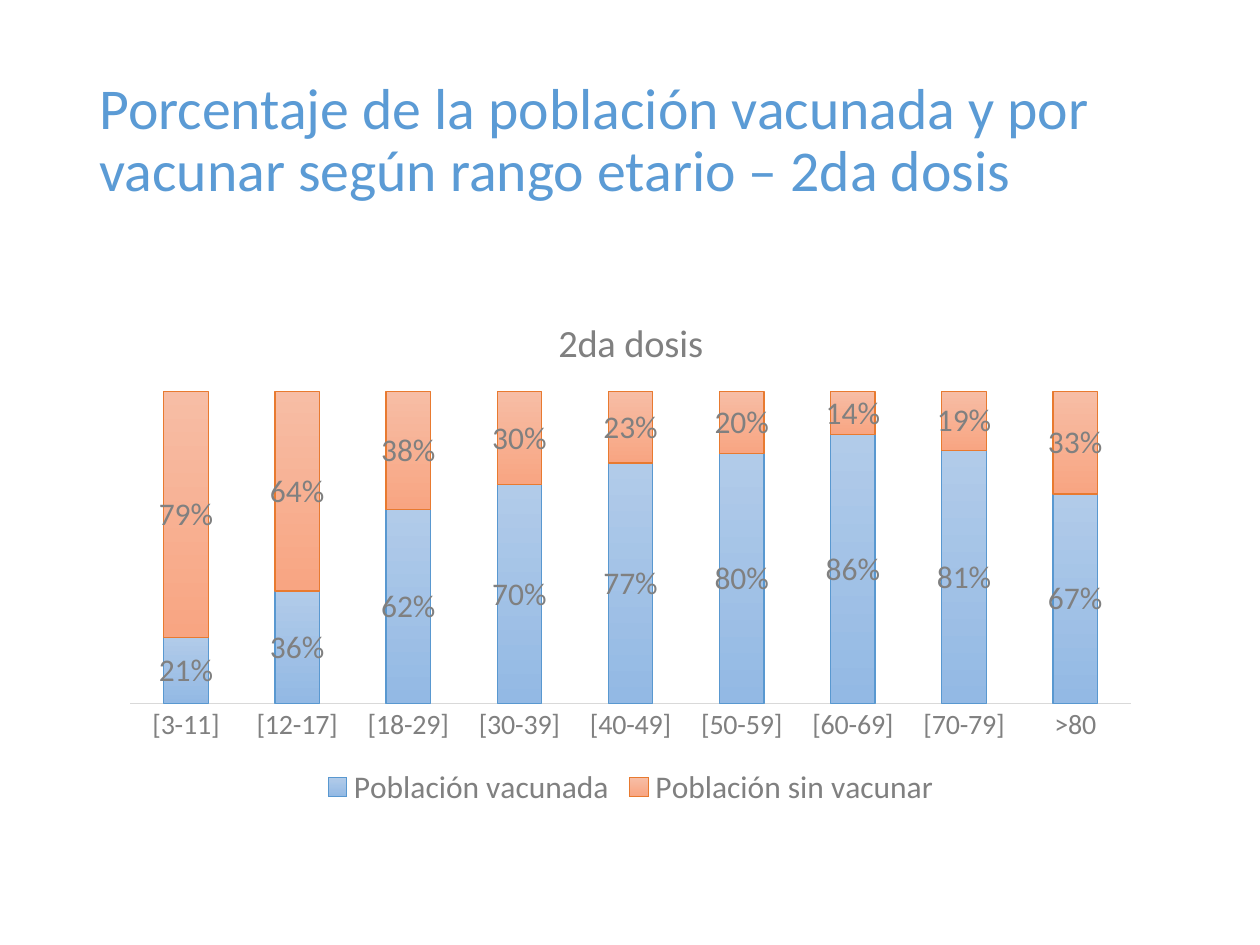
"""Build the slide on vaccinated population share by age range, second dose."""
from pptx import Presentation
from pptx import util as u
from pptx.chart.data import CategoryChartData
from pptx.dml.color import RGBColor
from pptx.enum import chart as ch, text
from pptx.oxml import parse_xml
from pptx.oxml.ns import nsdecls

TITLE = "Porcentaje de la población vacunada y por vacunar según rango etario – 2da dosis"
CHART_TITLE = "2da dosis"
AGES = ["[3-11]", "[12-17]", "[18-29]", "[30-39]", "[40-49]", "[50-59]",
        "[60-69]", "[70-79]", ">80"]
VACCINATED = [0.21, 0.36, 0.62, 0.7, 0.77, 0.8, 0.86, 0.81, 0.67]
SERIES = {
    "Población vacunada": VACCINATED,
    "Población sin vacunar": [round(1 - share, 2) for share in VACCINATED],
}
THEME = {
    "font": "Calibri", "title": "5B9BD5", "gray": "808080", "axis": "D9D9D9",
    "title_size": 33, "chart_title_size": 22, "label_size": 18, "axis_size": 16,
    "bars": [("B1CBE9", "93B9E4", "5998D0"), ("F7BDA5", "F8A582", "E87A30")],
}
PLOT_AREA = {"x": 0.02, "y": 0.19, "w": 0.96, "h": 0.6}


def color(name):
    return RGBColor.from_string(THEME.get(name, name))


def style(font, size, shade="gray"):
    font.name = THEME["font"]
    font.size = u.Pt(THEME[size])
    font.bold = False
    font.color.rgb = color(shade)


def outline(line, shade):
    line.color.rgb = color(shade)
    line.width = u.Pt(0.75)


def place(shape, left, top, width, height):
    shape.left, shape.top = u.Inches(left), u.Inches(top)
    shape.width, shape.height = u.Inches(width), u.Inches(height)


def add_title(slide):
    title = slide.shapes.title
    place(title, 0.69, 0.4, 8.62, 1.45)
    title.text_frame.text = TITLE
    title.text_frame.word_wrap = True
    title.text_frame.vertical_anchor = text.MSO_ANCHOR.MIDDLE
    paragraph = title.text_frame.paragraphs[0]
    paragraph.alignment = text.PP_ALIGN.LEFT
    paragraph.line_spacing = 0.9
    style(paragraph.font, "title_size", "title")


def set_plot_area(chart):
    area = chart._chartSpace.chart.plotArea
    for old in area.xpath("c:layout"):
        area.remove(old)
    sizes = "".join(f'<c:{key} val="{value}"/>' for key, value in PLOT_AREA.items())
    area.insert(0, parse_xml(
        f'<c:layout {nsdecls("c")}><c:manualLayout><c:layoutTarget val="inner"/>'
        f'<c:xMode val="edge"/><c:yMode val="edge"/>{sizes}</c:manualLayout></c:layout>'))


def style_axes(chart):
    ages, shares = chart.category_axis, chart.value_axis
    ages.major_tick_mark = ch.XL_TICK_MARK.NONE
    style(ages.tick_labels.font, "axis_size")
    outline(ages.format.line, "axis")
    shares.visible = False
    shares.has_major_gridlines = False
    shares.minimum_scale, shares.maximum_scale = 0, 1


def style_series(series, top, bottom, edge):
    fill = series.format.fill
    fill.gradient()
    fill.gradient_angle = 270
    for stop, shade, position in zip(fill.gradient_stops, (top, bottom), (0, 1)):
        stop.color.rgb = color(shade)
        stop.position = position
    outline(series.format.line, edge)
    labels = series.data_labels
    labels.show_value = True
    labels.number_format, labels.number_format_is_linked = "0%", False
    labels.position = ch.XL_LABEL_POSITION.CENTER
    style(labels.font, "label_size")


def add_chart(slide):
    data = CategoryChartData(number_format="0%")
    data.categories = AGES
    for name, shares in SERIES.items():
        data.add_series(name, shares)
    frame = [u.Inches(value) for value in (0.87, 2.32, 8.27, 4.13)]
    chart = slide.shapes.add_chart(ch.XL_CHART_TYPE.COLUMN_STACKED, *frame, data).chart
    chart.font.name = THEME["font"]
    chart.font.size = u.Pt(THEME["label_size"])
    chart.has_title = True
    chart.chart_title.include_in_layout = False
    chart.chart_title.text_frame.text = CHART_TITLE
    style(chart.chart_title.text_frame.paragraphs[0].font, "chart_title_size")
    chart.has_legend = True
    chart.legend.position = ch.XL_LEGEND_POSITION.BOTTOM
    chart.legend.include_in_layout = False
    style(chart.legend.font, "label_size")
    plot = chart.plots[0]
    plot.gap_width, plot.overlap = 150, 100
    plot.vary_by_categories = False
    for series, shades in zip(plot.series, THEME["bars"]):
        style_series(series, *shades)
    style_axes(chart)
    set_plot_area(chart)


def main():
    deck = Presentation()
    deck.slide_width, deck.slide_height = u.Inches(10), u.Inches(7.5)
    slide = deck.slides.add_slide(deck.slide_layouts.get_by_name("Title Only"))
    add_title(slide)
    add_chart(slide)
    deck.save("out.pptx")


if __name__ == "__main__":
    main()
